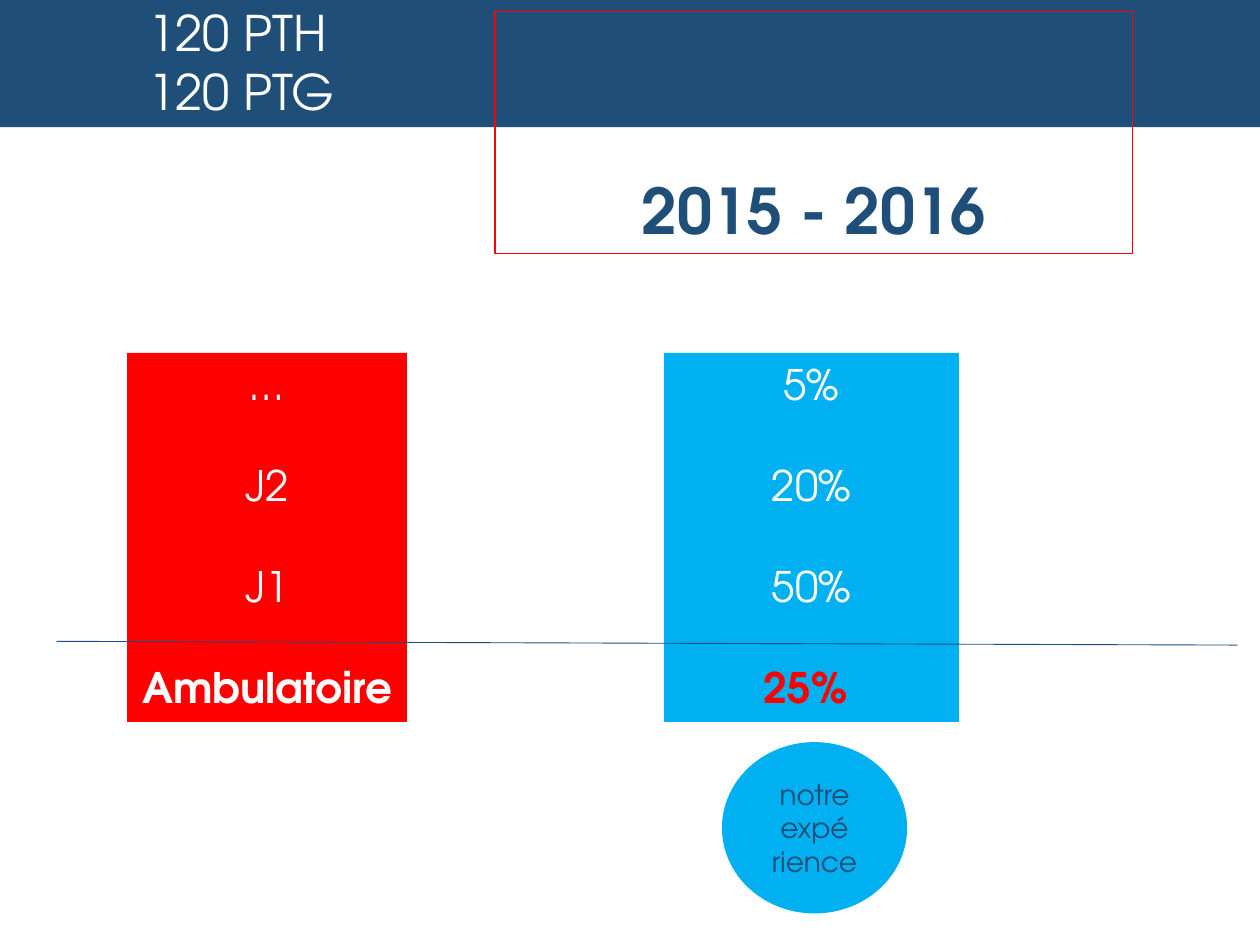
from dataclasses import dataclass, field
from typing import Any, Optional

from lxml.etree import SubElement
from pptx import Presentation
from pptx.dml.color import RGBColor
from pptx.enum.shapes import MSO_CONNECTOR, MSO_SHAPE
from pptx.enum.text import MSO_ANCHOR, PP_ALIGN
from pptx.oxml.ns import qn
from pptx.util import Inches, Pt

NAVY = RGBColor(0x1F, 0x4E, 0x79)
RED = RGBColor(0xFF, 0x00, 0x00)
SKY = RGBColor(0x00, 0xB0, 0xF0)
WHITE = RGBColor(0xFF, 0xFF, 0xFF)
FACE = "TeX Gyre Adventor"


@dataclass
class Panel:
    box: tuple[float, float, float, float]
    lines: list[str]
    size: int
    ink: RGBColor
    fill: Optional[RGBColor] = None
    edge: Optional[RGBColor] = None
    form: MSO_SHAPE = MSO_SHAPE.RECTANGLE
    align: PP_ALIGN = PP_ALIGN.CENTER
    gap: float = 0
    frame: dict[str, Any] = field(default_factory=dict)
    last: dict[str, Any] = field(default_factory=dict)


def style(font: Any, form: dict[str, Any]) -> None:
    for name, value in form.items():
        if name == "color":
            font.color.rgb = value
        else:
            setattr(font, name, value)


def draw(slide: Any, panel: Panel) -> None:
    shape = slide.shapes.add_shape(panel.form, *map(Inches, panel.box))
    shape.shadow.inherit = False
    if panel.fill is None:
        shape.fill.background()
    else:
        shape.fill.solid()
        shape.fill.fore_color.rgb = panel.fill
    if panel.edge is None:
        shape.line.fill.background()
    else:
        shape.line.color.rgb = panel.edge
        shape.line.width = Pt(0.75)

    text = shape.text_frame
    frame = {"word_wrap": True, "vertical_anchor": MSO_ANCHOR.TOP} | panel.frame
    for name, value in frame.items():
        setattr(text, name, value)
    base = {"name": FACE, "size": Pt(panel.size), "color": panel.ink, "bold": False}
    end = len(panel.lines) - 1
    for i, line in enumerate(panel.lines):
        para = text.paragraphs[0] if i == 0 else text.add_paragraph()
        para.alignment = panel.align
        para.space_before = Pt(panel.gap if i else 0)
        run = para.add_run()
        run.text = line
        style(run.font, base | (panel.last if i == end else {}))


def rule(slide: Any, start: tuple[float, float], stop: tuple[float, float]) -> None:
    line = slide.shapes.add_connector(MSO_CONNECTOR.STRAIGHT, *map(Inches, start + stop))
    line.line.color.rgb = NAVY
    line.line.width = Pt(0.5)
    SubElement(line._element.spPr, qn("a:effectLst"))


def main() -> None:
    """Build the slide on length of stay and save it."""
    deck = Presentation()
    deck.slide_width, deck.slide_height = Inches(10), Inches(7.5)
    slide = deck.slides.add_slide(deck.slide_layouts[6])

    stays = Panel((1.01, 2.8, 2.22, 2.93), ["…", "J2", "J1", "Ambulatoire"], 24, WHITE,
                  RED, gap=28.8, frame={"word_wrap": False}, last={"bold": True})
    rates = Panel((5.27, 2.8, 2.34, 2.93), ["5%", "20%", "50%", "25% "], 24, WHITE,
                  SKY, gap=28.8, last={"bold": True, "color": RED})
    badge = Panel((5.73, 5.89, 1.47, 1.36), ["notre", "expé", "rience"], 16, NAVY, SKY,
                  form=MSO_SHAPE.OVAL, frame={"vertical_anchor": MSO_ANCHOR.MIDDLE})
    header = Panel((0, -0.03, 10, 1.04), ["120 PTH", "120 PTG"], 28, WHITE, NAVY,
                   align=PP_ALIGN.LEFT, frame={"margin_left": Inches(1.18)})
    period = Panel((3.93, 0.09, 5.06, 1.92), ["2015 - 2016"], 36, NAVY, edge=RED,
                   frame={"vertical_anchor": MSO_ANCHOR.BOTTOM}, last={"bold": True})

    for panel in (stays, rates):
        draw(slide, panel)
    rule(slide, (0.45, 5.09), (9.82, 5.12))
    for panel in (badge, header, period):
        draw(slide, panel)
    deck.save("out.pptx")


if __name__ == "__main__":
    main()
